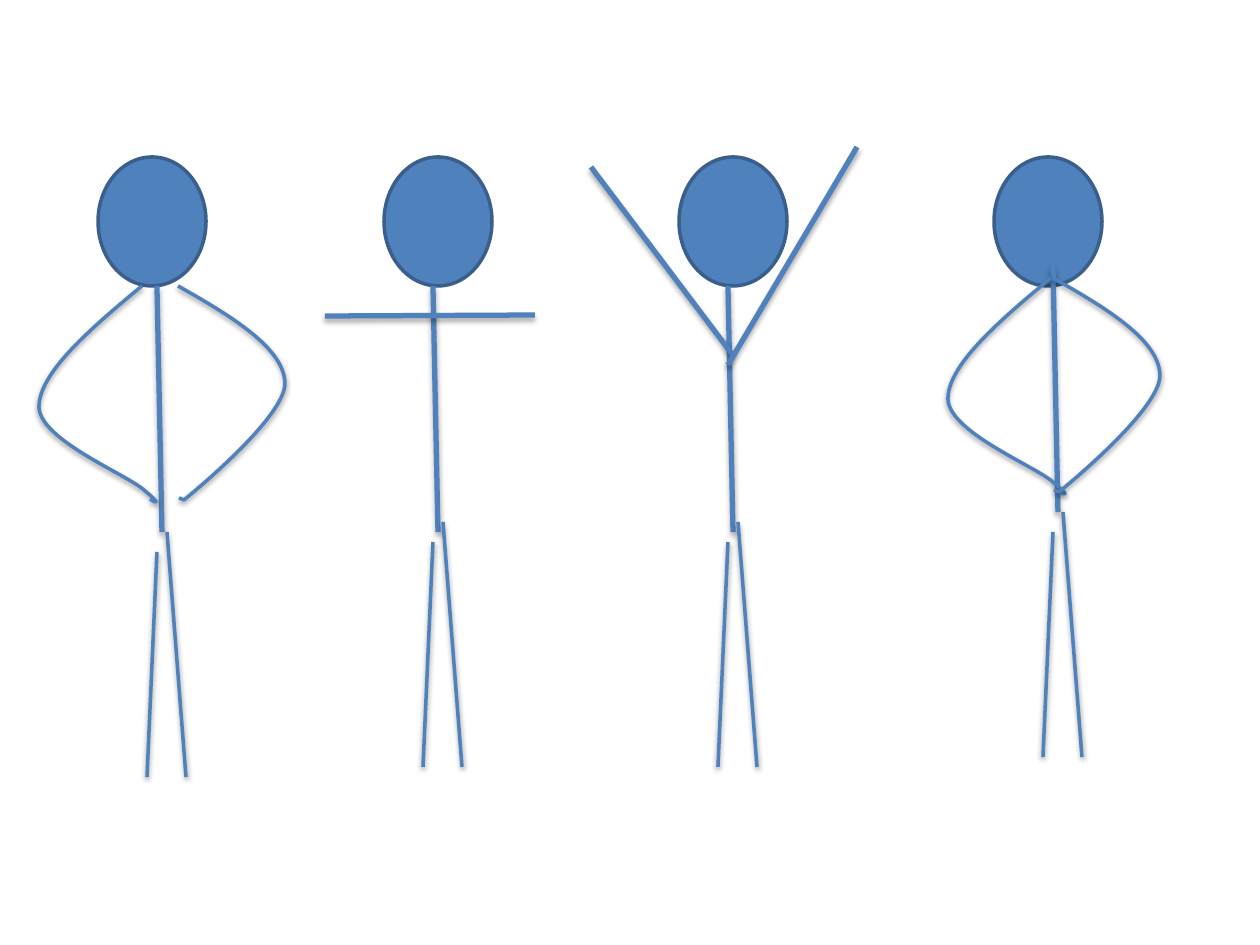
from lxml.etree import SubElement
from pptx import Presentation
from pptx.dml.color import RGBColor
from pptx.enum.shapes import MSO_CONNECTOR, MSO_SHAPE
from pptx.oxml.ns import qn
from pptx.util import Pt

PX = 914400 / 126
BLUE = RGBColor(0x4F, 0x81, 0xBD)
DARK_BLUE = RGBColor(0x3A, 0x5F, 0x8C)

HEAD_W, HEAD_H = 108, 129
TORSO_DX, TORSO_H = 5, 246
THICK, THIN = 3, 2

# Bent arms as offsets from the shoulder, three points to each curve
LEFT_ARM = [(-52, 43), (-103, 87), (-103, 121),
            (-102, 154), (-16, 188), (2, 204),
            (20, 219), (14, 217), (8, 213)]
RIGHT_ARM = [(53, 30), (106, 62), (107, 97),
             (108, 132), (6, 214), (6, 214),
             (1, 212)]


def emu(px):
    return round(px * PX)


def style_stroke(sp, width):
    """Blue line with a soft shadow below it."""
    sp.line.color.rgb = BLUE
    sp.line.width = Pt(width)
    dist, alpha = (1.8, 35) if width == THICK else (1.6, 38)
    sp_pr = sp._element.spPr
    for old in sp_pr.findall(qn("a:effectLst")):
        sp_pr.remove(old)
    effects = SubElement(sp_pr, qn("a:effectLst"))
    shadow = SubElement(effects, qn("a:outerShdw"), blurRad=str(Pt(3.1)),
                        dist=str(Pt(dist)), dir="5400000", rotWithShape="0")
    color = SubElement(shadow, qn("a:srgbClr"), val="000000")
    SubElement(color, qn("a:alpha"), val=str(alpha * 1000))


def add_stroke(shapes, start, end, width):
    line = shapes.add_connector(MSO_CONNECTOR.STRAIGHT,
                                *(emu(v) for v in (*start, *end)))
    style_stroke(line, width)


def add_curve(shapes, start, offsets):
    """Freeform whose points are taken in threes as Bézier curves."""
    x, y = start
    builder = shapes.build_freeform(emu(x), emu(y))
    builder.add_line_segments([(emu(x + dx), emu(y + dy)) for dx, dy in offsets],
                              close=False)
    sp = builder.convert_to_shape()
    segments = list(sp._element.iter(qn("a:lnTo")))
    for i in range(0, len(segments) - 2, 3):
        curve = segments[i].makeelement(qn("a:cubicBezTo"))
        segments[i].addprevious(curve)
        for segment in segments[i:i + 3]:
            curve.append(segment[0])
            segment.getparent().remove(segment)
    sp.fill.background()
    style_stroke(sp, THIN)


def add_figure(shapes, left, top, neck, hip_drop, straight_arms=(), shoulders=()):
    """Stick figure; all points are relative to the top left of its head."""
    def at(dx, dy):
        return left + dx, top + dy

    head = shapes.add_shape(MSO_SHAPE.OVAL, emu(left), emu(top),
                            emu(HEAD_W), emu(HEAD_H))
    head.shadow.inherit = False
    head.fill.solid()
    head.fill.fore_color.rgb = BLUE
    head.line.color.rgb = DARK_BLUE
    head.line.width = Pt(2)

    x, y = neck
    hip, foot = y + hip_drop, y + hip_drop + 225
    add_stroke(shapes, at(x, y), at(x + TORSO_DX, y + TORSO_H), THICK)
    add_stroke(shapes, at(x, hip), at(x - 10, foot), THIN)
    add_stroke(shapes, at(x + 10, hip - 20), at(x + 29, foot), THIN)

    for start, end in straight_arms:
        add_stroke(shapes, at(*start), at(*end), THICK)
    for shoulder, arm in zip(shoulders, (LEFT_ARM, RIGHT_ARM)):
        add_curve(shapes, at(*shoulder), arm)


def main():
    prs = Presentation()
    prs.slide_width, prs.slide_height = emu(1260), emu(945)
    shapes = prs.slides.add_slide(prs.slide_layouts[6]).shapes
    top = 157

    add_figure(shapes, 98, top, (59, 129), 266,
               shoulders=[(44, 129), (80, 129)])
    add_figure(shapes, 384, top, (49, 129), 256,
               straight_arms=[((151, 158), (-59, 159))])
    add_figure(shapes, 679, top, (49, 129), 256,
               straight_arms=[((53, 197), (-88, 10)), ((178, -10), (49, 208))])
    add_figure(shapes, 994, top, (59, 109), 266,
               shoulders=[(57, 121), (59, 121)])
    prs.save("out.pptx")


if __name__ == "__main__":
    main()
